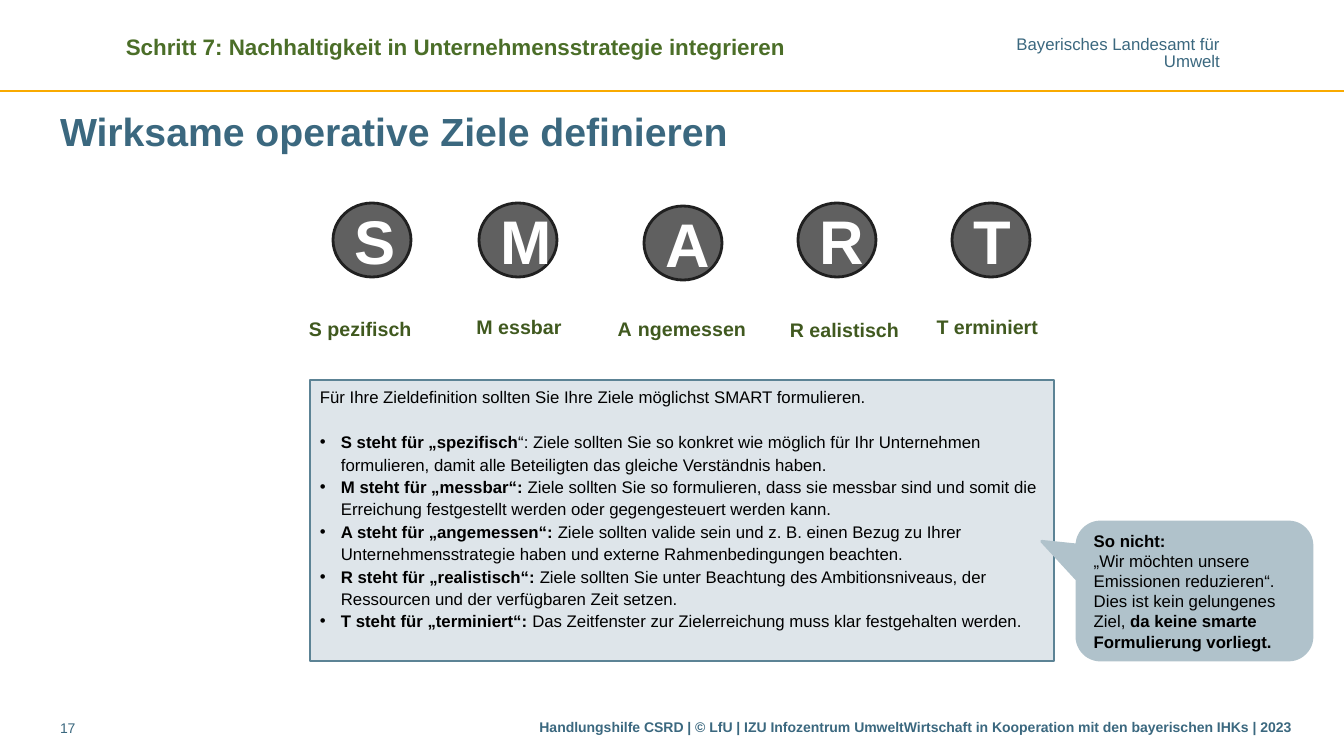
"""Build the slide on effective operative goals by the SMART rule."""
from lxml.etree import SubElement as Sub
from pptx import Presentation
from pptx.dml.color import RGBColor as Rgb
from pptx.enum.shapes import MSO_CONNECTOR as Conn, MSO_SHAPE as Kind
from pptx.enum.text import MSO_ANCHOR as Anchor, PP_ALIGN as Align
from pptx.oxml.ns import qn
from pptx.util import Emu, Pt

OFFICE = ["Bayerisches Landesamt für", "Umwelt"]
STEP = "Schritt 7: Nachhaltigkeit in Unternehmensstrategie integrieren"
TITLE = "Wirksame operative Ziele definieren"
PAGE = "17"
FOOT = ("Handlungshilfe CSRD | © LfU | IZU Infozentrum UmweltWirtschaft "
        "in Kooperation mit den bayerischen IHKs | 2023")
SMART = [
    ("S", "pezifisch ", (333, 203), (296, 312, 131), 14),
    ("M", "essbar ", (479, 203), (456, 310, 121), 14),
    ("A", "ngemessen", (644, 206), (589, 309, 167), 16),
    ("R", "ealistisch", (798, 203), (756, 313, 153), 14),
    ("T", "erminiert", (952, 203), (914, 310, 134), 14),
]
INTRO = "Für Ihre Zieldefinition sollten Sie Ihre Ziele möglichst SMART formulieren."
GOALS = [
    ("S steht für „spezifisch",
     "“: Ziele sollten Sie so konkret wie möglich für Ihr Unternehmen "
     "formulieren, damit alle Beteiligten das gleiche Verständnis haben."),
    ("M steht für „messbar“: ",
     "Ziele sollten Sie so formulieren, dass sie messbar sind und somit die "
     "Erreichung festgestellt werden oder gegengesteuert werden kann."),
    ("A steht für „angemessen“: ",
     "Ziele sollten valide sein und z. B. einen Bezug zu Ihrer "
     "Unternehmensstrategie haben und externe Rahmenbedingungen beachten."),
    ("R steht für „realistisch“: ",
     "Ziele sollten Sie unter Beachtung des Ambitionsniveaus, der "
     "Ressourcen und der verfügbaren Zeit setzen."),
    ("T steht für „terminiert“: ",
     "Das Zeitfenster zur Zielerreichung muss klar festgehalten werden."),
]
WRONG = [
    [("So nicht:", True)],
    [("„Wir möchten unsere Emissionen reduzieren“. Dies ist kein gelungenes Ziel, ", False),
     ("da keine smarte Formulierung vorliegt.", True)],
]

THEME = {
    "font": "Arial", "blue": "3B687F", "green": "4B6E28", "leaf": "40591F",
    "gold": "F9AA00", "ink": "000000", "white": "FFFFFF",
    "disc": "606060", "rim": "202020", "panel": "DEE5EA", "edge": "5C8395",
    "note": "B0C2CB",
    "title": 28, "letter": 44, "step": 16, "label": 14, "body": 12, "small": 10,
}
PX = 9071.43
WIDE, HIGH = 1344, 756
DISC = (78, 74)
LEAD = 16
HANG = 21


def px(num):
    return Emu(round(num * PX))


def tint(name):
    return Rgb.from_string(THEME[name])


def write(shape, paras, size, color, bold=False, align=Align.LEFT,
          anchor=Anchor.TOP, wrap=True, pad=None):
    frame = shape.text_frame
    frame.word_wrap, frame.vertical_anchor = wrap, anchor
    if pad is not None:
        frame.margin_left = frame.margin_right = 0
        frame.margin_top = frame.margin_bottom = px(pad)
    for num, parts in enumerate(paras):
        para = frame.add_paragraph() if num else frame.paragraphs[0]
        para.alignment = align
        for part in [(parts, bold)] if isinstance(parts, str) else parts:
            run = para.add_run()
            run.text, run.font.bold = part
            run.font.name, run.font.size = THEME["font"], Pt(THEME[size])
            run.font.color.rgb = tint(color)
    return frame.paragraphs


def label(slide, box, paras, size, color, **look):
    return write(slide.shapes.add_textbox(*map(px, box)), paras, size, color, **look)


def draw(slide, kind, box, fill, edge, weight):
    shape = slide.shapes.add_shape(kind, *map(px, box))
    shape.shadow.inherit = False
    shape.fill.solid()
    shape.fill.fore_color.rgb = tint(fill)
    shape.line.color.rgb = tint(edge)
    shape.line.width = Pt(weight)
    return shape


def bullet(para):
    props = para._p.get_or_add_pPr()
    props.set("marL", str(px(HANG)))
    props.set("indent", str(-px(HANG)))
    Sub(props, qn("a:buFont")).set("typeface", THEME["font"])
    Sub(props, qn("a:buChar")).set("char", "•")


def head(slide):
    rule = slide.shapes.add_connector(Conn.STRAIGHT, 0, px(91), px(WIDE), px(91))
    rule.line.color.rgb = tint("gold")
    rule.line.width = Pt(2)
    Sub(rule._element.spPr, qn("a:effectLst"))
    for para in label(slide, (1015, 37, 205, 34), OFFICE, "body", "blue",
                      align=Align.RIGHT, wrap=False, pad=0):
        para.line_spacing = 0.85
    label(slide, (116, 28, 846, 37), [STEP], "step", "green", bold=True)
    label(slide, (60, 103, 1241, 55), [TITLE], "title", "blue", bold=True,
          anchor=Anchor.MIDDLE, pad=5)


def smart(slide):
    for mark, rest, spot, (left, top, wide), gap in SMART:
        disc = draw(slide, Kind.OVAL, spot + DISC, "disc", "rim", 2)
        write(disc, [mark], "letter", "white", bold=True,
              align=Align.CENTER, anchor=Anchor.MIDDLE)
        parts = [(text, True) for text in (mark, " ", rest)]
        paras = label(slide, (left, top, wide, 34), [parts], "label", "leaf",
                      align=Align.RIGHT)
        paras[0].runs[1].font.size = Pt(gap)


def goals(slide):
    panel = draw(slide, Kind.RECTANGLE, (310, 380, 744, 281), "panel", "edge", 1)
    lines = [[(lead, True), (text, False)] for lead, text in GOALS]
    paras = write(panel, [INTRO] + lines, "body", "ink")
    for para in paras[1:]:
        bullet(para)
    for para in paras:
        para.line_spacing = Pt(LEAD)
    paras[1].space_before = Pt(LEAD)


def note(slide):
    shape = draw(slide, Kind.ROUNDED_RECTANGULAR_CALLOUT, (1077, 522, 235, 138),
                 "note", "note", 2)
    for num, val in enumerate((-0.65, -0.36, 0.17)):
        shape.adjustments[num] = val
    write(shape, WRONG, "body", "ink", anchor=Anchor.MIDDLE)


def main():
    deck = Presentation()
    deck.slide_width, deck.slide_height = px(WIDE), px(HIGH)
    slide = deck.slides.add_slide(deck.slide_layouts[6])
    head(slide)
    goals(slide)
    smart(slide)
    label(slide, (60, 714, 71, 31), [PAGE], "small", "blue", pad=5)
    label(slide, (521, 714, 780, 31), [FOOT], "small", "blue", bold=True,
          align=Align.RIGHT)
    note(slide)
    deck.save("out.pptx")


if __name__ == "__main__":
    main()
